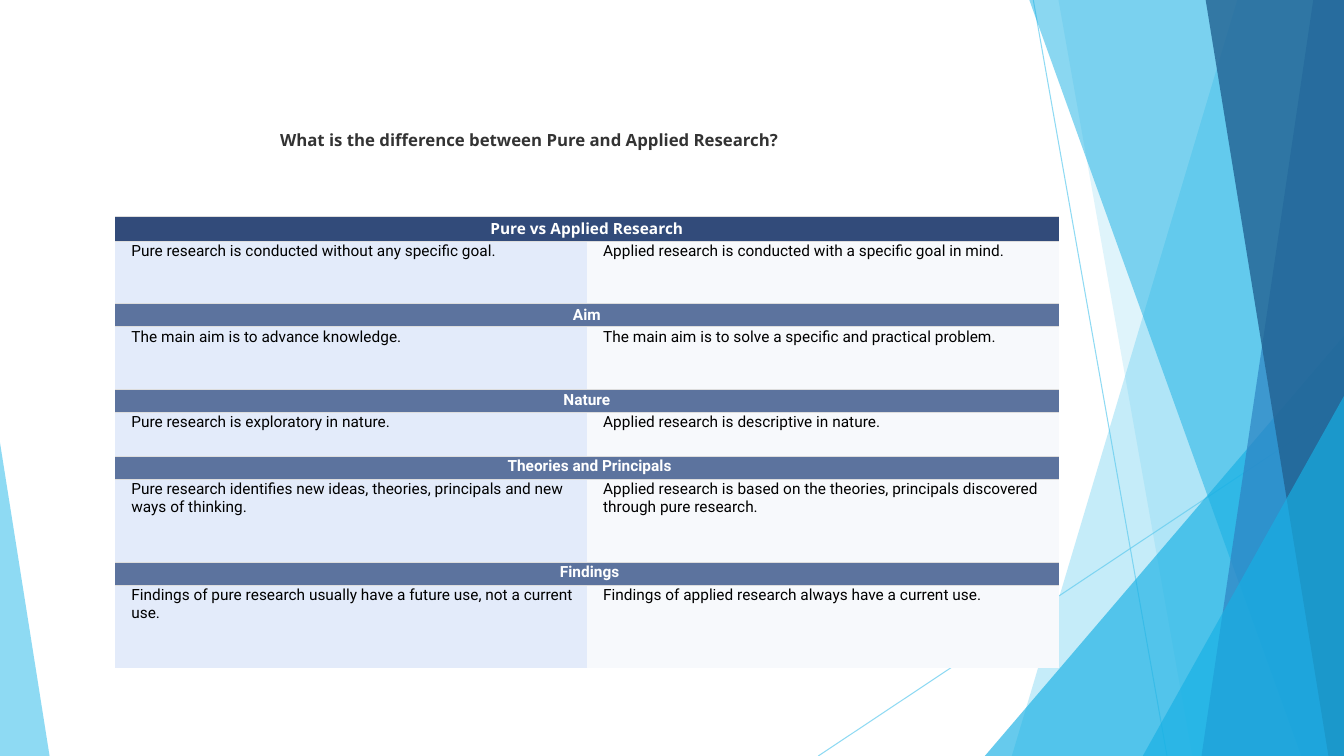
from lxml.etree import SubElement
from pptx import Presentation
from pptx.dml.color import RGBColor
from pptx.enum.shapes import MSO_CONNECTOR, MSO_SHAPE
from pptx.enum.text import MSO_ANCHOR, PP_ALIGN
from pptx.oxml import parse_xml
from pptx.oxml.ns import nsdecls, qn
from pptx.util import Cm, Pt

HUES = {
    "sky": "5FCBEF", "cyan": "17B0E4", "blue": "2E83C3", "deep": "226292",
    "navy": "324B7A", "slate": "5C739E", "pale": "E3EBFA", "mist": "F7F9FC",
    "white": "FFFFFF", "black": "000000", "dark": "333333", "rule": "DDDDDD",
}


def paint(fill, hue, alpha=100):
    fill.solid()
    fill.fore_color.rgb = RGBColor.from_string(HUES[hue])
    if alpha < 100:
        color = fill._xPr.find(qn("a:solidFill"))[0]
        SubElement(color, qn("a:alpha"), val=str(alpha * 1000))


def style(para, face, size, hue, bold):
    for run in para.runs:
        run.font.name = face
        run.font.size = Pt(size)
        run.font.bold = bold
        run.font.color.rgb = RGBColor.from_string(HUES[hue])


deck = Presentation()
deck.slide_width = Cm(33.87)
deck.slide_height = Cm(19.05)
slide = deck.slides.add_slide(deck.slide_layouts[6])
shapes = slide.shapes
right, base, top = 33.87, 19.05, -0.03

for ends in [(26.04, 0, 29.41, base), (right, 10.24, 20.62, base)]:
    line = shapes.add_connector(MSO_CONNECTOR.STRAIGHT, *[Cm(n) for n in ends])
    line.line.width = Pt(0.75)
    paint(line.line.fill, "sky", 70)
    SubElement(line._element.spPr, qn("a:effectLst"))

facets = [
    ("band", (31.19, 25.5), "sky", 36),
    ("band", (26.67, 30.05), "sky", 20),
    ("wedge", (24.82, 8.46, 9.05, 1), "cyan", 66),
    ("band", (25.93, 32.79), "cyan", 50),
    ("band", (33.1, 30.28), "blue", 70),
    ("band", (30.38, 33.48), "deep", 80),
    ("wedge", (28.8, 9.98, 5.07, 1), "cyan", 66),
    ("wedge", (0, 11.15, 1.25, 0), "sky", 70),
]
for kind, place, hue, alpha in facets:
    if kind == "band":
        upper, lower = place
        pen = shapes.build_freeform(Cm(upper), Cm(top))
        pen.add_line_segments(
            [(Cm(x), Cm(y)) for x, y in
             [(right, top), (right, base), (lower, base)]], close=True)
        facet = pen.convert_to_shape()
    else:
        x, y, width, apex = place
        facet = shapes.add_shape(MSO_SHAPE.ISOSCELES_TRIANGLE,
                                 Cm(x), Cm(y), Cm(width), Cm(base - y))
        facet.adjustments[0] = apex
    facet.shadow.inherit = False
    facet.line.fill.background()
    paint(facet.fill, hue, alpha)

rows = [
    ("Pure vs Applied Research",),
    ("Pure research is conducted without any specific goal.",
     "Applied research is conducted with a specific goal in mind."),
    ("Aim",),
    ("The main aim is to advance knowledge.",
     "The main aim is to solve a specific and practical problem."),
    ("Nature",),
    ("Pure research is exploratory in nature.",
     "Applied research is descriptive in nature."),
    ("Theories and Principals",),
    ("Pure research identifies new ideas, theories, principals and new ways of thinking.",
     "Applied research is based on the theories, principals discovered through pure research."),
    ("Findings",),
    ("Findings of pure research usually have a future use, not a current use.",
     "Findings of applied research always have a current use."),
]
tall = [0.58, 1.58, 0.58, 1.58, 0.58, 1.1, 0.58, 2.09, 0.58, 2.09]
frame = shapes.add_table(len(rows), 2, Cm(2.9), Cm(5.46), Cm(23.78), Cm(sum(tall)))
table = frame.table
table.first_row = table.horz_banding = False
for col in table.columns:
    col.width = Cm(11.89)

for r, texts in enumerate(rows):
    table.rows[r].height = Cm(tall[r])
    head = len(texts) == 1
    if head:
        table.cell(r, 0).merge(table.cell(r, 1))
    for c in range(2):
        cell = table.cell(r, c)
        mid = head and r < 6
        cell.margin_left = Cm(0.27 if mid else 0.41)
        cell.margin_right = Cm(0.27)
        cell.margin_top = Cm(0.03)
        cell.margin_bottom = Cm(0.05)
        cell.vertical_anchor = MSO_ANCHOR.MIDDLE if mid else MSO_ANCHOR.TOP
        if head:
            paint(cell.fill, "slate" if r else "navy")
        else:
            paint(cell.fill, ("pale", "mist")[c])
        props = cell._tc.get_or_add_tcPr()
        for spot, side in enumerate("LRTB"):
            drawn = side == "T" or side == "B" and r < len(rows) - 1
            ink = (f'<a:solidFill><a:srgbClr val="{HUES["rule"]}"/></a:solidFill>'
                   if drawn else "<a:noFill/>")
            props.insert(spot, parse_xml(
                f'<a:ln{side} {nsdecls("a")} w="{Pt(0.6)}">{ink}</a:ln{side}>'))
        if c < len(texts):
            cell.text_frame.text = texts[c]
            para = cell.text_frame.paragraphs[0]
            para.alignment = PP_ALIGN.CENTER if head else PP_ALIGN.LEFT
            style(para, "Roboto" if r else "Open Sans", 11,
                  "white" if head else "black", head)

title = shapes.add_textbox(Cm(7.06), Cm(3.28), Cm(17.12), Cm(1.27))
paint(title.fill, "white")
body = title.text_frame
body.word_wrap = True
body.vertical_anchor = MSO_ANCHOR.TOP
body.margin_left = body.margin_right = body.margin_top = body.margin_bottom = 0
body.text = "What is the difference between Pure and Applied Research?"
style(body.paragraphs[0], "Open Sans", 12, "dark", True)

deck.save("out.pptx")
